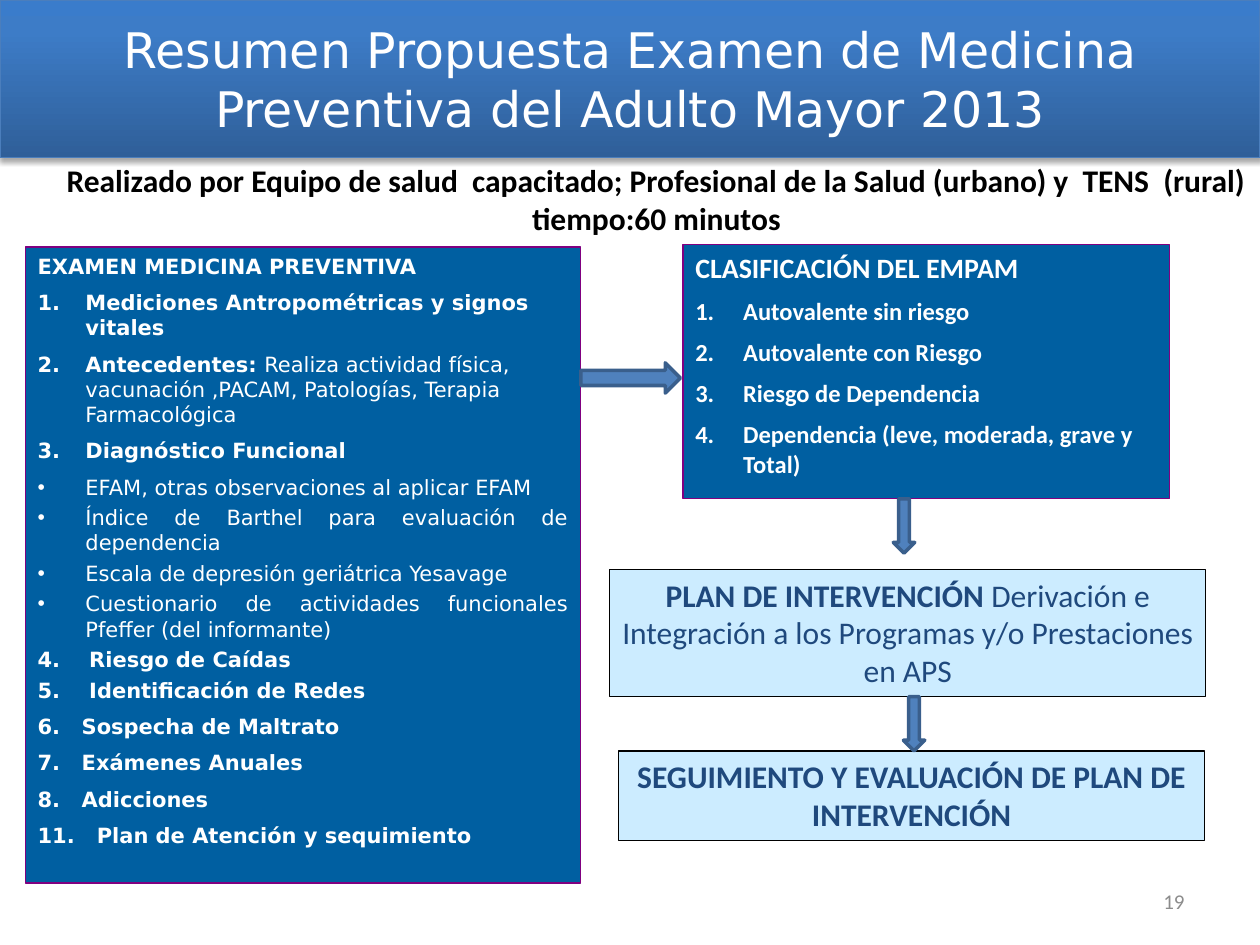
import copy
import pptx
import pptx.dml.color
import pptx.enum.shapes
import pptx.enum.text
import pptx.oxml
import pptx.oxml.ns
import pptx.util

RGB = pptx.dml.color.RGBColor
WHITE, BLACK = RGB(255, 255, 255), RGB(0, 0, 0)
PANEL, PANEL_EDGE = RGB(0x00, 0x5F, 0xA1), RGB(0x80, 0x00, 0x80)
STEP, NAVY = RGB(0xCC, 0xEC, 0xFF), RGB(0x1F, 0x49, 0x7D)
ARROW, ARROW_EDGE = RGB(0x4F, 0x81, 0xBD), RGB(0x3A, 0x5F, 0x8C)
BANNER_EDGE, GREY = RGB(0x4B, 0x7E, 0xBC), RGB(0x8C, 0x8C, 0x8C)
BANNER_STOPS = [(0, RGB(0x2F, 0x5F, 0x99)), (0.8, RGB(0x3D, 0x7C, 0xC7)),
                (1, RGB(0x3A, 0x7C, 0xCB))]
SHAPE = pptx.enum.shapes.MSO_SHAPE
ALIGN = pptx.enum.text.PP_ALIGN
MIDDLE = pptx.enum.text.MSO_ANCHOR.MIDDLE
SANS, BODY = "DejaVu Sans", "Calibri"
WIDTH, HEIGHT = 10, 7.5
HANG = 0.38

NUMBER = '<a:buFont {} typeface="+mj-lt"/>', '<a:buAutoNum {} type="arabicPeriod"/>'
BULLET = '<a:buFont {} typeface="Arial"/>', '<a:buChar {} char="•"/>'

TITLE = "Resumen Propuesta Examen de Medicina Preventiva del Adulto Mayor 2013"
SUBTITLE = ("Realizado por Equipo de salud  capacitado; Profesional de la Salud (urbano) "
            "y  TENS  (rural) tiempo:60 minutos")

NUMBERED = dict(marker=NUMBER, hang=HANG)
BULLETED = dict(marker=BULLET, hang=HANG)
TIGHT = dict(before=3, align=ALIGN.JUSTIFY)

EXAM = [
    ([("EXAMEN MEDICINA PREVENTIVA", True)], {}),
    ([("Mediciones Antropométricas y signos vitales", True)], NUMBERED),
    ([("Antecedentes: ", True),
      ("Realiza actividad física, vacunación ,PACAM, Patologías, Terapia Farmacológica",
       False)], NUMBERED),
    ([("Diagnóstico Funcional", True)], NUMBERED),
    ([("EFAM, otras observaciones al aplicar EFAM", False)], BULLETED),
    ([("Índice de Barthel para evaluación de dependencia", False)], BULLETED | TIGHT),
    ([("Escala de depresión geriátrica Yesavage", False)], BULLETED | TIGHT),
    ([("Cuestionario de actividades funcionales Pfeffer (del informante)", False)],
     BULLETED | TIGHT),
    ([("4.\tRiesgo de Caídas", True)], dict(hang=0.41) | TIGHT),
    ([("5.\tIdentificación de Redes", True)], dict(hang=0.41) | TIGHT),
    ([("6.\tSospecha de Maltrato", True)], dict(hang=0.35)),
    ([("7.\tExámenes Anuales", True)], dict(hang=0.35)),
    ([("8.\tAdicciones", True)], dict(hang=0.35)),
    ([("11.\tPlan de Atención y sequimiento", True)], dict(hang=0.47)),
]
CLASSES = [([("CLASIFICACIÓN DEL EMPAM", True)], dict(size=16))] + [
    ([(name, True)], NUMBERED) for name in (
        "Autovalente sin riesgo", "Autovalente con Riesgo", "Riesgo de Dependencia",
        "Dependencia (leve, moderada, grave y Total)")]
PLAN = [([("PLAN DE INTERVENCIÓN", True),
          (" Derivación e Integración a los Programas y/o Prestaciones en APS", False)], {})]
FOLLOW_UP = [([("SEGUIMIENTO Y EVALUACIÓN DE PLAN DE INTERVENCIÓN", True)], {})]

PANEL_LOOK = dict(fill=PANEL, edge=PANEL_EDGE)
STEP_LOOK = dict(fill=STEP, edge=BLACK)
STEP_TEXT = dict(size=18, color=NAVY, align=ALIGN.CENTER)
BOXES = [
    ((2, 26.13, 44.1, 67.33), PANEL_LOOK, EXAM,
     dict(font=SANS, size=12, color=WHITE, before=6.4)),
    ((54.2, 25.87, 38.6, 26.93), PANEL_LOOK, CLASSES,
     dict(size=14, color=WHITE, before=6.7)),
    ((48.4, 60.27, 47.3, 13.47), STEP_LOOK, PLAN, STEP_TEXT),
    ((49.1, 79.47, 46.5, 9.47), STEP_LOOK, FOLLOW_UP, STEP_TEXT),
]
ARROWS = [
    (SHAPE.RIGHT_ARROW, (46.1, 38.4, 7.9, 3.2)),
    (SHAPE.DOWN_ARROW, (70.9, 52.8, 1.7, 5.73)),
    (SHAPE.DOWN_ARROW, (71.7, 73.73, 1.7, 5.73)),
]


def element(template):
    return pptx.oxml.parse_xml(template.format(pptx.oxml.ns.nsdecls("a")))


def place(percents):
    sides = (WIDTH, HEIGHT, WIDTH, HEIGHT)
    return [pptx.util.Inches(share * side / 100) for share, side in zip(percents, sides)]


def add_box(page, area, kind=SHAPE.RECTANGLE, fill=None, edge=None, weight=0.75):
    box = page.shapes.add_shape(kind, *place(area))
    if fill is not None:
        box.fill.solid()
        box.fill.fore_color.rgb = fill
    box.line.color.rgb = edge
    box.line.width = pptx.util.Pt(weight)
    box.shadow.inherit = False
    return box


def write(box, paragraphs, anchor=pptx.enum.text.MSO_ANCHOR.TOP, **base):
    frame = box.text_frame
    frame.word_wrap = True
    frame.vertical_anchor = anchor
    for index, (runs, special) in enumerate(paragraphs):
        look = dict(font=BODY, align=ALIGN.LEFT, before=0, hang=0, marker=()) | base | special
        para = frame.add_paragraph() if index else frame.paragraphs[0]
        para.alignment = look["align"]
        para.space_before = pptx.util.Pt(look["before"] if index else 0)
        settings = para._p.get_or_add_pPr()
        hang = pptx.util.Inches(look["hang"])
        settings.set("marL", str(hang))
        settings.set("indent", str(-hang))
        for part in look["marker"]:
            settings.append(element(part))
        for text, bold in runs:
            span = para.add_run()
            span.text = text
            span.font.name = look["font"]
            span.font.size = pptx.util.Pt(look["size"])
            span.font.bold = bold
            span.font.color.rgb = look["color"]


def add_banner(page):
    banner = add_box(page, (0, 0, 100, 16.67), edge=BANNER_EDGE)
    banner.fill.gradient()
    stop_list = banner._element.spPr.find(".//" + pptx.oxml.ns.qn("a:gsLst"))
    stop_list.append(copy.deepcopy(stop_list[-1]))
    for stop, (position, color) in zip(banner.fill.gradient_stops, BANNER_STOPS):
        stop.position = position
        stop.color.rgb = color
    banner.fill.gradient_angle = 90
    banner._element.spPr.find(pptx.oxml.ns.qn("a:effectLst")).append(element(
        '<a:outerShdw {} blurRad="39370" dist="22860" dir="5400000" rotWithShape="0">'
        '<a:srgbClr val="000000"><a:alpha val="35000"/></a:srgbClr></a:outerShdw>'))
    write(banner, [([(TITLE, False)], {})], anchor=MIDDLE, font=SANS, size=28,
          color=WHITE, align=ALIGN.CENTER)


def main():
    deck = pptx.Presentation()
    deck.slide_width = pptx.util.Inches(WIDTH)
    deck.slide_height = pptx.util.Inches(HEIGHT)
    page = deck.slides.add_slide(deck.slide_layouts[6])
    for area, look, paragraphs, text_look in BOXES:
        write(add_box(page, area, **look), paragraphs, **text_look)
    add_banner(page)
    for kind, area in ARROWS:
        add_box(page, area, kind=kind, fill=ARROW, edge=ARROW_EDGE, weight=2)
    subtitle = page.shapes.add_textbox(*place((4.2, 16.4, 95.8, 9.47)))
    write(subtitle, [([(SUBTITLE, True)], {})], size=18, color=BLACK, align=ALIGN.CENTER)
    page_number = page.shapes.add_textbox(*place((71.7, 92.67, 23.3, 5.33)))
    write(page_number, [([("19", False)], {})], anchor=MIDDLE, size=12, color=GREY,
          align=ALIGN.RIGHT)
    deck.save("out.pptx")


if __name__ == "__main__":
    main()
